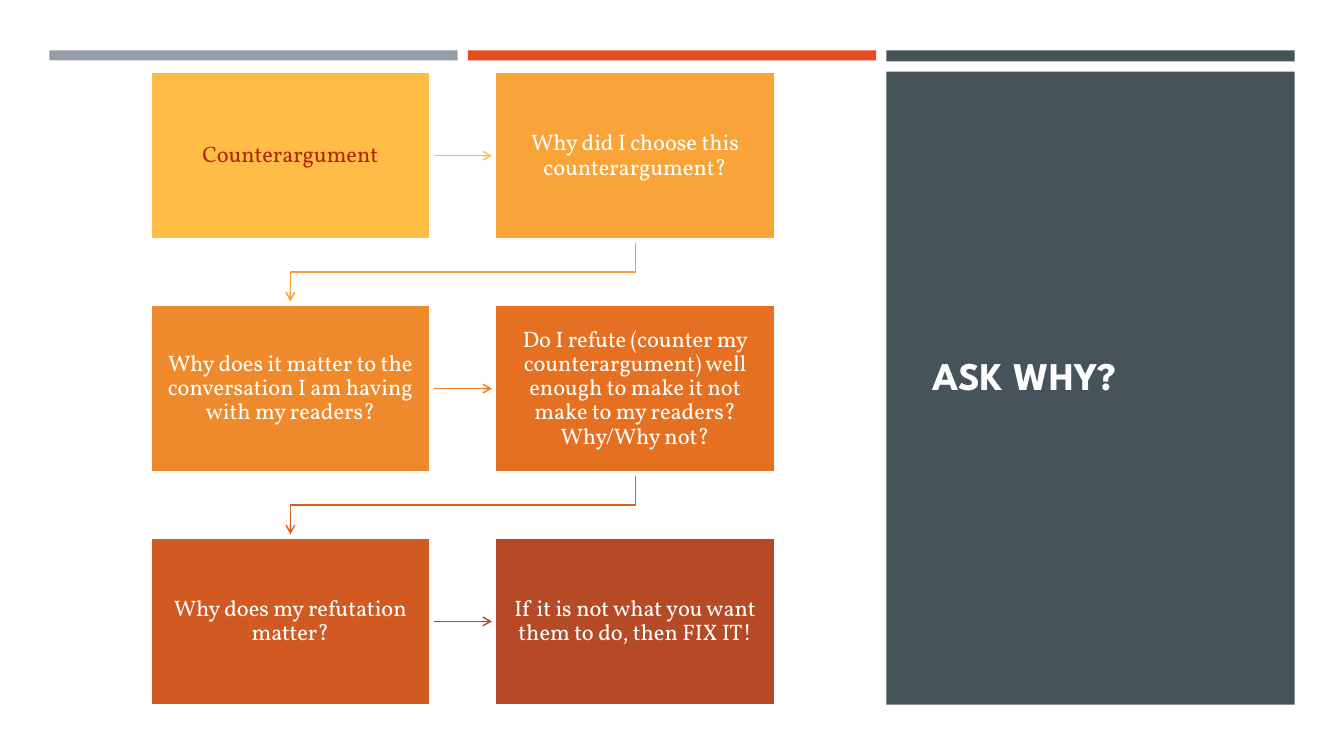
from dataclasses import dataclass

from lxml import etree
from pptx import Presentation
from pptx import util as u
from pptx.dml.color import RGBColor
from pptx.enum import shapes, text
from pptx.oxml.ns import qn

EMU_PER_PX = 9144  # 100 px to the inch


@dataclass(frozen=True)
class Theme:
    white: str = "FFFFFF"
    title: str = "FFFEFF"
    slate: str = "465359"
    grey: str = "969FA7"
    red: str = "E84C22"
    dark_red: str = "B22600"
    title_font: str = "League Spartan"
    body_font: str = "Vollkorn"
    title_size: int = 28
    body_size: int = 16
    border: int = 2
    arrow: int = 1


@dataclass(frozen=True)
class Box:
    x: int
    y: int
    w: int
    h: int
    fill: str


@dataclass(frozen=True)
class Step:
    words: str
    fill: str
    color: str
    arrow: str = ""  # colour of the arrow to the next step


THEME = Theme()
BARS = (
    Box(49, 50, 405, 10, THEME.grey),
    Box(464, 50, 405, 10, THEME.red),
    Box(879, 50, 405, 11, THEME.slate),
)
PANEL = Box(879, 71, 405, 628, THEME.slate)
STEPS = (
    Step("Counterargument", "FFBD47", THEME.dark_red, "FFBD47"),
    Step("Why did I choose this counterargument?", "F8A439", THEME.white, "F69E36"),
    Step("Why does it matter to the conversation I am having with my readers?",
         "EF8A2C", THEME.white, "EB7D26"),
    Step("Do I refute (counter my counterargument) well enough to make it not "
         "make to my readers? Why/Why not?", "E57021", THEME.white, "D75F20"),
    Step("Why does my refutation matter?", "D05A21", THEME.white, "B64926"),
    Step("If it is not what you want them to do, then FIX IT!", "B64926", THEME.white),
)
COLUMNS = 2
LEFT, TOP = 149, 71
STEP_W, STEP_H = 278, 167
PITCH_X, PITCH_Y = 342, 231
ARROW_GAP = 3  # clear space at both ends of an arrow
INSET = 14


def px(n: float) -> u.Emu:
    return u.Emu(round(n * EMU_PER_PX))


def rgb(color: str) -> RGBColor:
    return RGBColor.from_string(color)


def add_box(s, box: Box):
    sp = s.shapes.add_shape(shapes.MSO_SHAPE.RECTANGLE,
                            px(box.x), px(box.y), px(box.w), px(box.h))
    sp.shadow.inherit = False
    sp.fill.solid()
    sp.fill.fore_color.rgb = rgb(box.fill)
    sp.line.fill.background()
    return sp


def add_step(s, step: Step, x: int, y: int) -> None:
    sp = add_box(s, Box(x, y, STEP_W, STEP_H, step.fill))
    sp.line.color.rgb = rgb(THEME.white)
    sp.line.width = u.Pt(THEME.border)
    tf = sp.text_frame
    tf.word_wrap = True
    tf.vertical_anchor = text.MSO_ANCHOR.MIDDLE
    tf.margin_left = tf.margin_right = tf.margin_top = tf.margin_bottom = px(INSET)
    p = tf.paragraphs[0]
    p.text = step.words
    p.alignment = text.PP_ALIGN.CENTER
    p.line_spacing = 0.9
    p.font.name = THEME.body_font
    p.font.size = u.Pt(THEME.body_size)
    p.font.color.rgb = rgb(step.color)


def add_arrow(s, kind, x1: float, y1: float, x2: float, y2: float, color: str):
    c = s.shapes.add_connector(kind, px(x1), px(y1), px(x2), px(y2))
    c.line.color.rgb = rgb(color)
    c.line.width = u.Pt(THEME.arrow)
    etree.SubElement(c.line._get_or_add_ln(), qn("a:tailEnd"), type="arrow")
    etree.SubElement(c._element.spPr, qn("a:effectLst"))
    return c


def add_arrow_right(s, x: int, y: int, color: str) -> None:
    """Join the step at x, y to the one beside it."""
    mid = y + STEP_H / 2
    add_arrow(s, shapes.MSO_CONNECTOR.STRAIGHT, x + STEP_W + ARROW_GAP, mid,
              x + PITCH_X - ARROW_GAP, mid, color)


def add_arrow_down(s, x: int, y: int, color: str) -> None:
    """Join the step at x, y to the first of the next row, by a quarter-turned elbow."""
    start_x = x + STEP_W / 2
    start_y, end_y = y + STEP_H + ARROW_GAP, y + PITCH_Y - ARROW_GAP
    mid_x, mid_y = start_x - PITCH_X / 2, (start_y + end_y) / 2
    half_w, half_h = (end_y - start_y) / 2, PITCH_X / 2
    c = add_arrow(s, shapes.MSO_CONNECTOR.ELBOW, mid_x - half_w, mid_y - half_h,
                  mid_x + half_w, mid_y + half_h, color)
    c._element.spPr.find(qn("a:xfrm")).set("rot", str(90 * 60000))


def place_title(s, words: str) -> None:
    sp = s.shapes.title
    sp.left, sp.top, sp.width, sp.height = px(915), px(114), px(329), px(515)
    s.shapes._spTree.append(sp._element)  # in front of the panel
    tf = sp.text_frame
    tf.word_wrap = True
    tf.auto_size = text.MSO_AUTO_SIZE.NONE
    tf.vertical_anchor = text.MSO_ANCHOR.MIDDLE
    p = tf.paragraphs[0]
    p.text = words
    p.alignment = text.PP_ALIGN.LEFT
    p.font.name = THEME.title_font
    p.font.size = u.Pt(THEME.title_size)
    p.font.bold = True
    p.font.color.rgb = rgb(THEME.title)


def main() -> None:
    prs = Presentation()
    prs.slide_width, prs.slide_height = px(1333), px(750)
    s = prs.slides.add_slide(prs.slide_layouts.get_by_name("Title Only"))
    for box in (PANEL, *BARS):
        add_box(s, box)
    place_title(s, "ASK WHY?")
    for i, step in enumerate(STEPS):
        row, col = divmod(i, COLUMNS)
        x, y = LEFT + col * PITCH_X, TOP + row * PITCH_Y
        add_step(s, step, x, y)
        if step.arrow:
            join = add_arrow_right if col == 0 else add_arrow_down
            join(s, x, y, step.arrow)
    prs.save("out.pptx")


if __name__ == "__main__":
    main()
